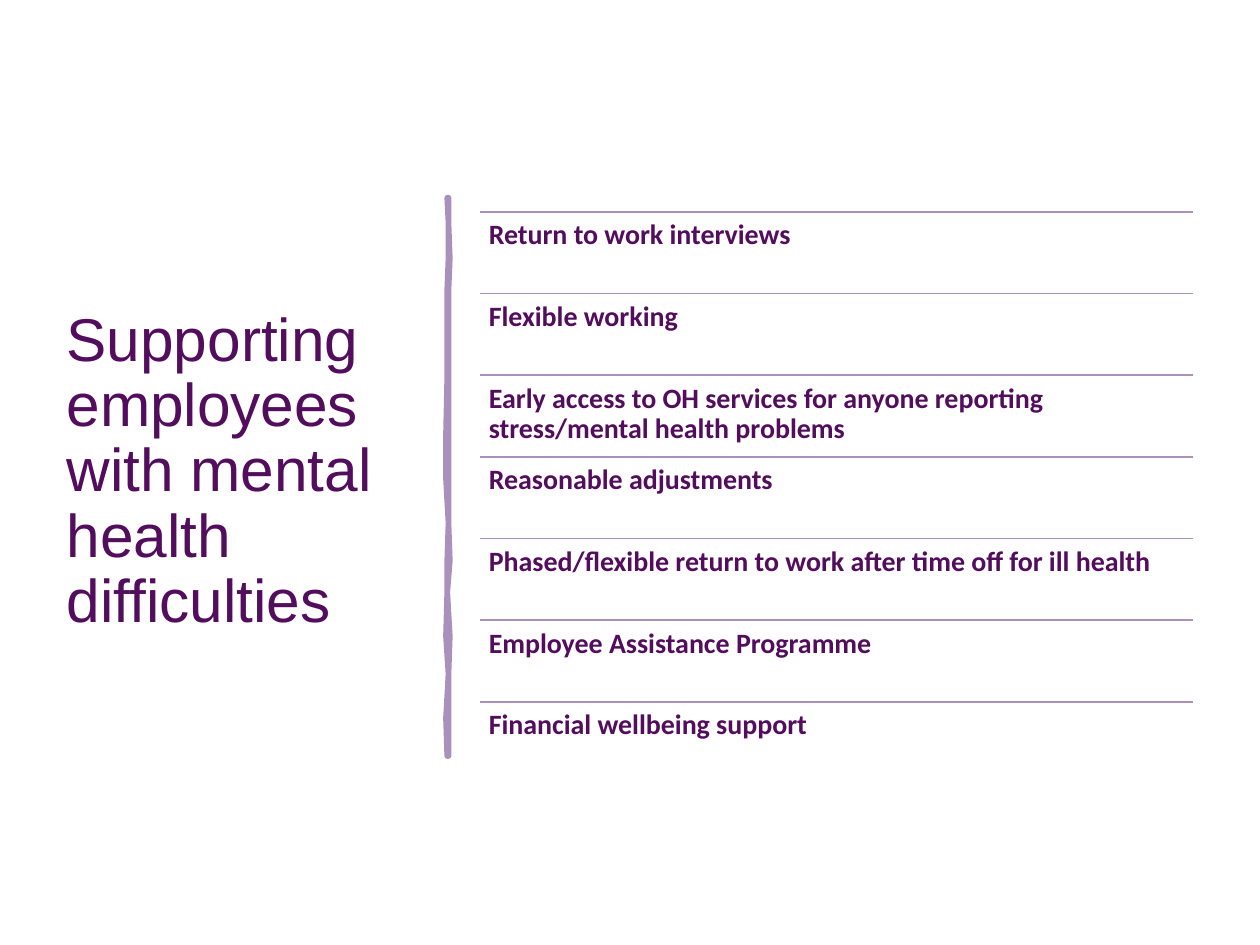
import dataclasses

import lxml.etree
import pptx
import pptx.dml.color
import pptx.enum.text
import pptx.oxml.ns
import pptx.util

COLORS = {"ink": "520D5D", "line": "A991BC"}
SLIDE_W, SLIDE_H = 10, 7.5


@dataclasses.dataclass(frozen=True)
class Grid:
    left: float
    top: float
    width: float
    height: float
    rows: int

    def row_top(self, row: int) -> float:
        return self.top + row * self.height / self.rows


@dataclasses.dataclass(frozen=True)
class Knot:
    y: float
    left: float
    right: float


TITLE = Grid(left=0.43, top=1.46, width=3.1, height=4.58, rows=1)
LIST = Grid(left=3.81, top=1.68, width=5.66, height=4.54, rows=7)
SPINE_X = 3.55
SPINE = [
    Knot(1.57, 0, 0.01),
    Knot(1.77, 0.01, 0.01),
    Knot(2.05, 0.01, 0.02),
    Knot(2.3, 0, 0.01),
    Knot(2.65, 0, 0.01),
    Knot(3.0, 0, 0.01),
    Knot(3.45, -0.01, 0.01),
    Knot(3.8, -0.01, 0.01),
    Knot(4.15, 0.01, 0.01),
    Knot(4.45, 0, 0.02),
    Knot(4.7, 0, 0),
    Knot(5.05, -0.01, 0.02),
    Knot(5.35, 0.01, 0.01),
    Knot(5.7, -0.01, 0.01),
    Knot(6.0, 0, 0.01),
]
ITEMS = [
    "Return to work interviews",
    "Flexible working",
    "Early access to OH services for anyone reporting stress/mental health problems",
    "Reasonable adjustments",
    "Phased/flexible return to work after time off for ill health",
    "Employee Assistance Programme",
    "Financial wellbeing support",
]


def inch(value: float) -> int:
    return pptx.util.Inches(value)


def rgb(name: str) -> pptx.dml.color.RGBColor:
    return pptx.dml.color.RGBColor.from_string(COLORS[name])


def format_text(p, font: str, size: float, bold: bool) -> None:
    p.alignment = pptx.enum.text.PP_ALIGN.LEFT
    p.line_spacing = 0.9
    for r in p.runs:
        r.font.name = font
        r.font.size = pptx.util.Pt(size)
        r.font.bold = bold
        r.font.color.rgb = rgb("ink")


def add_title(s, text: str) -> None:
    sp = s.shapes.title
    sp.left, sp.top = inch(TITLE.left), inch(TITLE.top)
    sp.width, sp.height = inch(TITLE.width), inch(TITLE.height)
    tf = sp.text_frame
    tf.text = text
    tf.word_wrap = True
    tf.auto_size = pptx.enum.text.MSO_AUTO_SIZE.NONE
    tf.vertical_anchor = pptx.enum.text.MSO_ANCHOR.MIDDLE
    format_text(tf.paragraphs[0], "Arial", 34.5, False)


def add_spine(s) -> None:
    right = [(inch(SPINE_X + k.right), inch(k.y)) for k in SPINE]
    left = [(inch(SPINE_X + k.left), inch(k.y)) for k in reversed(SPINE)]
    builder = s.shapes.build_freeform(*right[0])
    builder.add_line_segments(right[1:] + left, close=True)
    sp = builder.convert_to_shape()
    sp.shadow.inherit = False
    sp.fill.solid()
    sp.fill.fore_color.rgb = rgb("line")
    sp.line.color.rgb = rgb("line")
    sp.line.width = pptx.util.Pt(3.25)
    lxml.etree.SubElement(sp.line._get_or_add_ln(), pptx.oxml.ns.qn("a:round"))


def add_rule(s, top: float) -> None:
    right = LIST.left + LIST.width
    line = s.shapes.add_connector(
        pptx.enum.shapes.MSO_CONNECTOR.STRAIGHT,
        inch(LIST.left), inch(top), inch(right), inch(top),
    )
    line.line.color.rgb = rgb("line")
    line.line.width = pptx.util.Pt(1)
    lxml.etree.SubElement(line._element.spPr, pptx.oxml.ns.qn("a:effectLst"))


def add_item(s, row: int, text: str) -> None:
    top = LIST.row_top(row)
    add_rule(s, top)
    sp = s.shapes.add_textbox(
        inch(LIST.left), inch(top), inch(LIST.width), inch(LIST.height / LIST.rows)
    )
    tf = sp.text_frame
    tf.word_wrap = True
    tf.margin_left = tf.margin_right = tf.margin_top = tf.margin_bottom = inch(0.07)
    tf.text = text
    format_text(tf.paragraphs[0], "Calibri", 16, True)


def main() -> None:
    prs = pptx.Presentation()
    prs.slide_width, prs.slide_height = inch(SLIDE_W), inch(SLIDE_H)
    s = prs.slides.add_slide(prs.slide_layouts[5])
    add_title(s, "Supporting employees with mental health difficulties")
    add_spine(s)
    for row, text in enumerate(ITEMS):
        add_item(s, row, text)
    prs.save("out.pptx")


if __name__ == "__main__":
    main()
